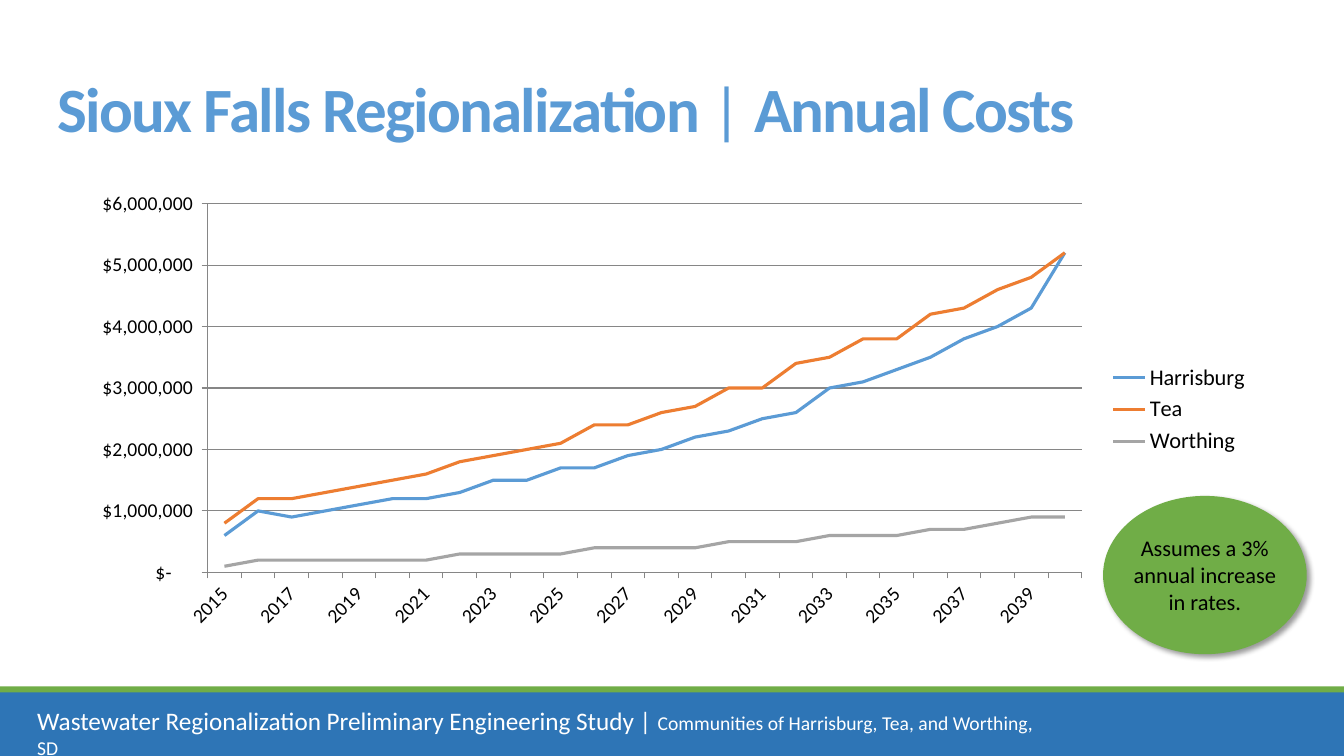
from lxml import etree
from pptx import Presentation
from pptx.chart.data import CategoryChartData
from pptx.dml.color import RGBColor
from pptx.enum.chart import XL_CHART_TYPE, XL_LEGEND_POSITION, XL_TICK_MARK
from pptx.enum.shapes import MSO_SHAPE
from pptx.enum.text import MSO_ANCHOR, PP_ALIGN
from pptx.oxml.ns import qn
from pptx.util import Inches, Pt

LINE, RIGHT = XL_CHART_TYPE.LINE, XL_LEGEND_POSITION.RIGHT
OUT, NONE = XL_TICK_MARK.OUTSIDE, XL_TICK_MARK.NONE
RECT, OVAL = MSO_SHAPE.RECTANGLE, MSO_SHAPE.OVAL
MIDDLE, TOP = MSO_ANCHOR.MIDDLE, MSO_ANCHOR.TOP
LEFT, CENTER = PP_ALIGN.LEFT, PP_ALIGN.CENTER

FONT = "Calibri"
COLORS = {
    "blue": "5B9BD5", "orange": "ED7D31", "gray": "A5A5A5", "green": "70AD47",
    "band": "2E75B6", "white": "FFFFFF", "black": "000000", "grid": "868686",
}

# Each run: text, size, bold
TITLE = [("Sioux Falls Regionalization ", 45, True), ("|", 45, False),
         (" Annual Costs", 45, True)]
FOOTER = [("Wastewater Regionalization Preliminary Engineering Study | ", 18, False),
          ("Communities of Harrisburg, Tea, and Worthing, SD", 14, False)]
NOTE = [("Assumes a 3% annual increase in rates.", 16, False)]

YEARS = [str(year) for year in range(2015, 2041)]
UNIT = 100000  # dollars per unit in COSTS
COSTS = [
    ("Harrisburg", "blue", [6, 10, 9, 10, 11, 12, 12, 13, 15, 15, 17, 17, 19, 20, 22,
                            23, 25, 26, 30, 31, 33, 35, 38, 40, 43, 52]),
    ("Tea", "orange", [8, 12, 12, 13, 14, 15, 16, 18, 19, 20, 21, 24, 24, 26, 27,
                       30, 30, 34, 35, 38, 38, 42, 43, 46, 48, 52]),
    ("Worthing", "gray", [1, 2, 2, 2, 2, 2, 2, 3, 3, 3, 3, 4, 4, 4, 4,
                          5, 5, 5, 6, 6, 6, 7, 7, 8, 9, 9]),
]
MONEY = '_("$"* #,##0_);_("$"* \\(#,##0\\);_("$"* "-"??_);_(@_)'
CHART = (0.74, 1.81, 11.76, 4.51)
PLOT = (2.06, 2.02, 8.67, 3.66)


def rgb(name):
    return RGBColor.from_string(COLORS[name])


def add(parent, tag, **attrs):
    return etree.SubElement(parent, qn(tag), attrs)


def add_block(slide, kind, box, color):
    block = slide.shapes.add_shape(kind, *map(Inches, box))
    block.shadow.inherit = False
    block.fill.solid()
    block.fill.fore_color.rgb = rgb(color)
    block.line.fill.background()
    return block


def add_text(slide, box, runs, color, align=LEFT, anchor=TOP):
    frame = slide.shapes.add_textbox(*map(Inches, box)).text_frame
    frame.word_wrap = True
    frame.vertical_anchor = anchor
    para = frame.paragraphs[0]
    para.alignment = align
    para.font.name = FONT
    para.font.color.rgb = rgb(color)
    for text, size, bold in runs:
        run = para.add_run()
        run.text = text
        run.font.name = FONT
        run.font.size = Pt(size)
        run.font.bold = bold
        run.font.color.rgb = rgb(color)
    return para


def add_shadow(shape):
    effects = shape._element.spPr.find(qn("a:effectLst"))
    cast = add(effects, "a:outerShdw", blurRad=str(Pt(4)), dist=str(Pt(3)),
               dir="2700000", algn="tl", rotWithShape="0")
    tone = add(cast, "a:srgbClr", val=COLORS["black"])
    add(tone, "a:alpha", val="40000")


def place_plot(chart):
    """Fix the inner plot area to PLOT, as fractions of CHART."""
    area = chart._chartSpace.chart.plotArea
    for old in area.findall(qn("c:layout")):
        area.remove(old)
    layout = etree.Element(qn("c:layout"))
    area.insert(0, layout)
    manual = add(layout, "c:manualLayout")
    add(manual, "c:layoutTarget", val="inner")
    for key in ("xMode", "yMode"):
        add(manual, "c:" + key, val="edge")
    left, top, width, height = CHART
    parts = ((PLOT[0] - left) / width, (PLOT[1] - top) / height,
             PLOT[2] / width, PLOT[3] / height)
    for key, part in zip("xywh", parts):
        add(manual, "c:" + key, val=f"{part:.4f}")


def style_axis(axis):
    axis.major_tick_mark = OUT
    axis.minor_tick_mark = NONE
    axis.format.line.color.rgb = rgb("grid")
    font = axis.tick_labels.font
    font.name, font.size = FONT, Pt(14)
    font.color.rgb = rgb("black")


def add_costs(slide):
    data = CategoryChartData()
    data.categories = YEARS
    for name, _, costs in COSTS:
        data.add_series(name, [cost * UNIT for cost in costs])
    chart = slide.shapes.add_chart(LINE, *map(Inches, CHART), data).chart
    chart.has_title = False
    chart.font.name, chart.font.size = FONT, Pt(10)
    chart.font.color.rgb = rgb("black")
    chart.plots[0].vary_by_categories = False
    for line, (_, color, _) in zip(chart.plots[0].series, COSTS):
        line.smooth = False
        line.format.line.color.rgb = rgb(color)
        line.format.line.width = Pt(2.25)

    years, money = chart.category_axis, chart.value_axis
    style_axis(years)
    style_axis(money)
    years.has_major_gridlines = False
    money.has_major_gridlines = True
    money.major_gridlines.format.line.color.rgb = rgb("grid")
    money.minimum_scale, money.maximum_scale = 0, 6000000
    money.major_unit = 1000000
    money.tick_labels.number_format = MONEY
    money.tick_labels.number_format_is_linked = False

    node = years._element
    node.find(qn("c:txPr")).find(qn("a:bodyPr")).set("rot", "-2700000")
    skip = etree.Element(qn("c:tickLblSkip"), val="2")
    node.find(qn("c:noMultiLvlLbl")).addprevious(skip)

    chart.has_legend = True
    legend = chart.legend
    legend.position = RIGHT
    legend.include_in_layout = False
    legend.font.name, legend.font.size = FONT, Pt(16)
    legend.font.color.rgb = rgb("black")
    place_plot(chart)


def main():
    deck = Presentation()
    deck.slide_width, deck.slide_height = Inches(13.33), Inches(7.5)
    slide = deck.slides.add_slide(deck.slide_layouts[6])

    add_block(slide, RECT, (0, 6.85, 13.33, 0.65), "band")
    add_text(slide, (0.27, 6.95, 10.29, 0.4), FOOTER, "white")
    add_block(slide, RECT, (0, 6.81, 13.33, 0.06), "green")
    add_shadow(add_block(slide, OVAL, (10.94, 4.92, 2.02, 1.57), "green"))
    title = add_text(slide, (0.47, 0.55, 10.73, 1.14), TITLE, "blue", anchor=MIDDLE)
    title.line_spacing = 0.85
    for run in title.runs:
        run.font._element.set("spc", "-120")
    add_text(slide, (11.07, 5.25, 1.76, 0.91), NOTE, "black", CENTER)
    add_costs(slide)
    deck.save("out.pptx")


if __name__ == "__main__":
    main()
